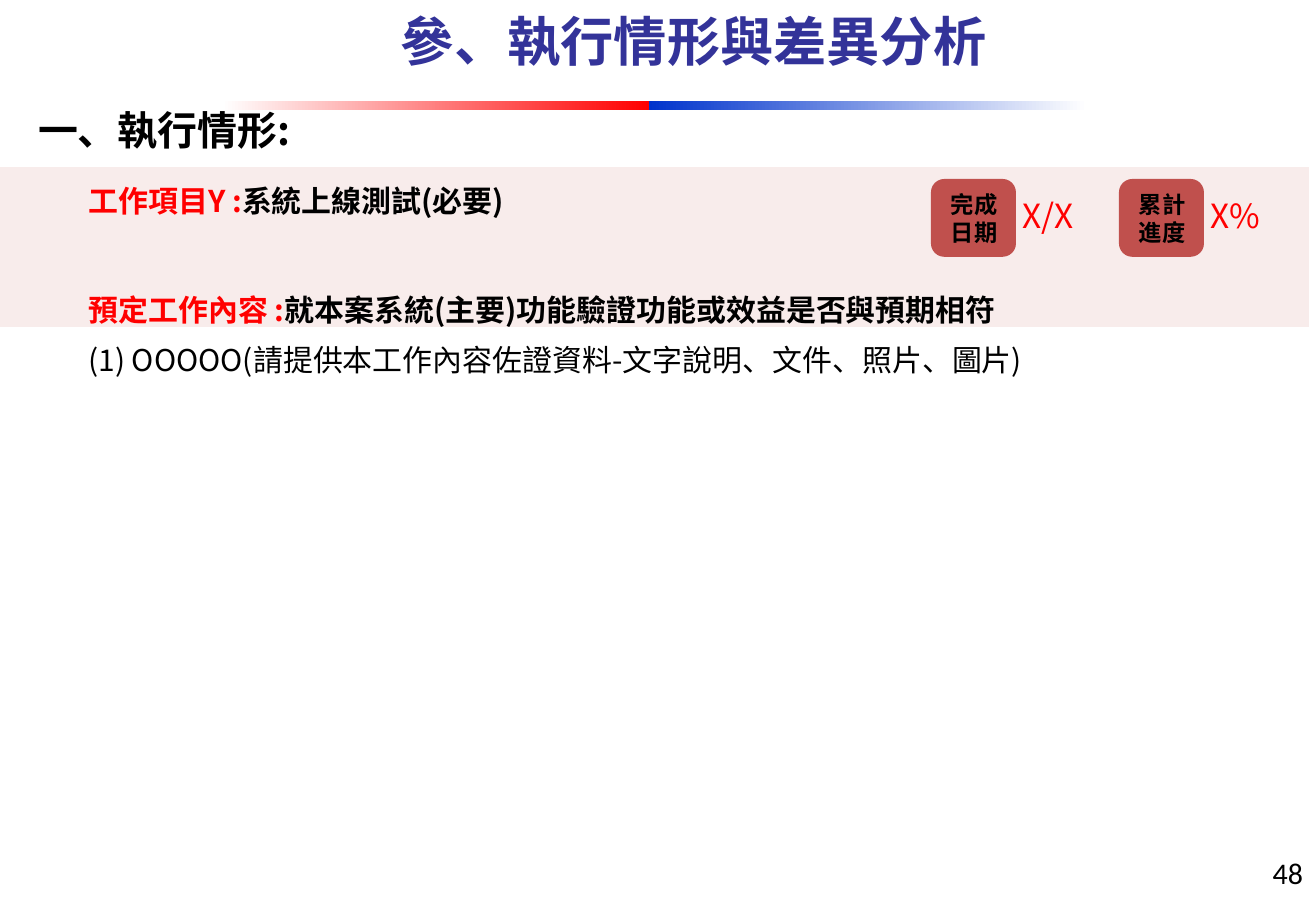
from dataclasses import dataclass

from lxml import etree
from pptx import Presentation
from pptx.dml.color import RGBColor
from pptx.enum.shapes import MSO_SHAPE
from pptx.enum.text import MSO_ANCHOR, MSO_AUTO_SIZE, PP_ALIGN
from pptx.oxml.ns import qn
from pptx.util import Pt

PX = 9144  # 100 px to the inch
RECTANGLE, ROUNDED = MSO_SHAPE.RECTANGLE, MSO_SHAPE.ROUNDED_RECTANGLE
TOP, MIDDLE = MSO_ANCHOR.TOP, MSO_ANCHOR.MIDDLE
LEFT, CENTER, RIGHT = PP_ALIGN.LEFT, PP_ALIGN.CENTER, PP_ALIGN.RIGHT
NO_AUTOFIT = MSO_AUTO_SIZE.NONE
SC, TC, LATIN = "Noto Sans CJK SC", "Noto Sans CJK TC", "Calibri"
COLORS = {
    "white": "FFFFFF",
    "black": "000000",
    "red": "FF0000",
    "blue": "0033CC",
    "title": "333399",
    "band": "F2DCDB",
    "badge": "C0504D",
}


@dataclass
class Run:
    text: str
    color: str = "black"


@dataclass
class Style:
    size: int
    font: str = SC
    bold: bool = False
    align: PP_ALIGN = LEFT
    leading: float = 1.2
    gap: int = 0


@dataclass
class Box:
    left: int
    top: int
    width: int
    height: int

    def emu(self) -> list[int]:
        return [n * PX for n in (self.left, self.top, self.width, self.height)]


@dataclass
class Badge:
    left: int
    lines: tuple[str, str]
    value: str


@dataclass
class Bar:
    box: Box
    start: str
    end: str


BARS = [
    Bar(Box(185, 84, 357, 8), "white", "red"),
    Bar(Box(542, 84, 366, 8), "blue", "white"),
]
BADGES = [
    Badge(778, ("完成", "日期"), "X/X"),
    Badge(935, ("累計", "進度"), "X%"),
]


def rgb(name: str) -> RGBColor:
    return RGBColor.from_string(COLORS[name])


def write(shape, paragraphs: list[list[Run]], style: Style, anchor=TOP) -> None:
    frame = shape.text_frame
    frame.word_wrap = True
    frame.auto_size = NO_AUTOFIT
    frame.vertical_anchor = anchor
    for index, runs in enumerate(paragraphs):
        paragraph = frame.add_paragraph() if index else frame.paragraphs[0]
        paragraph.alignment = style.align
        paragraph.line_spacing = Pt(style.size * style.leading)
        paragraph.space_before = Pt(style.gap if index else 0)
        for item in runs:
            run = paragraph.add_run()
            run.text = item.text
            run.font.size = Pt(style.size)
            run.font.bold = style.bold
            run.font.color.rgb = rgb(item.color)
            run.font.name = style.font
            east_asian = etree.SubElement(run.font._element, qn("a:ea"))
            east_asian.set("typeface", style.font)


def add_text(slide, box: Box, paragraphs: list[list[Run]], style: Style) -> None:
    write(slide.shapes.add_textbox(*box.emu()), paragraphs, style)


def add_block(slide, kind: MSO_SHAPE, box: Box, fill: str, line: str):
    shape = slide.shapes.add_shape(kind, *box.emu())
    shape.shadow.inherit = False
    shape.fill.solid()
    shape.fill.fore_color.rgb = rgb(fill)
    shape.line.color.rgb = rgb(line)
    shape.line.width = Pt(0.75)
    return shape


def add_bar(slide, bar: Bar) -> None:
    shape = slide.shapes.add_shape(RECTANGLE, *bar.box.emu())
    shape.shadow.inherit = False
    shape.line.fill.background()
    shape.fill.gradient()
    shape.fill.gradient_angle = 0
    for stop, color in zip(shape.fill.gradient_stops, (bar.start, bar.end)):
        stop.color.rgb = rgb(color)


def add_band(slide) -> None:
    band = add_block(slide, RECTANGLE, Box(-6, 139, 1100, 135), "band", "white")
    color = band.fill._xPr.find(qn("a:solidFill"))[0]
    etree.SubElement(color, qn("a:alpha")).set("val", "53000")


def add_badge(slide, badge: Badge) -> None:
    shape = add_block(slide, ROUNDED, Box(badge.left, 150, 70, 64), "badge", "badge")
    shape.text_frame.margin_left = 13 * PX
    shape.text_frame.margin_right = 0
    write(shape, [[Run(line)] for line in badge.lines], Style(14, TC, True), MIDDLE)
    add_text(slide, Box(badge.left + 66, 158, 94, 44),
             [[Run(badge.value, "red")]], Style(20, TC))


def main() -> None:
    presentation = Presentation()
    presentation.slide_width, presentation.slide_height = 1099 * PX, 750 * PX
    slide = presentation.slides.add_slide(presentation.slide_layouts[5])

    title = slide.shapes.title
    title.left, title.top, title.width, title.height = Box(212, 0, 735, 68).emu()
    write(title, [[Run("參、執行情形與差異分析", "title")]],
          Style(32, bold=True, align=CENTER), MIDDLE)

    for bar in BARS:
        add_bar(slide, bar)
    add_text(slide, Box(887, 709, 211, 41), [[Run("48")]],
             Style(18, LATIN, align=RIGHT))

    add_band(slide)
    add_text(slide, Box(64, 133, 983, 146), [
        [Run("工作項目Y :", "red"), Run("系統上線測試(必要)")],
        [Run("預定工作內容 :", "red"),
         Run("就本案系統(主要)功能驗證功能或效益是否與預期相符")],
    ], Style(18, bold=True, leading=1.8, gap=33))
    for badge in BADGES:
        add_badge(slide, badge)

    add_text(slide, Box(22, 83, 926, 51), [[Run("一、執行情形:")]],
             Style(24, bold=True))
    add_text(slide, Box(64, 280, 818, 70),
             [[Run("(1) OOOOO(請提供本工作內容佐證資料-文字說明、文件、照片、圖片)")]],
             Style(18))
    presentation.save("out.pptx")


if __name__ == "__main__":
    main()
